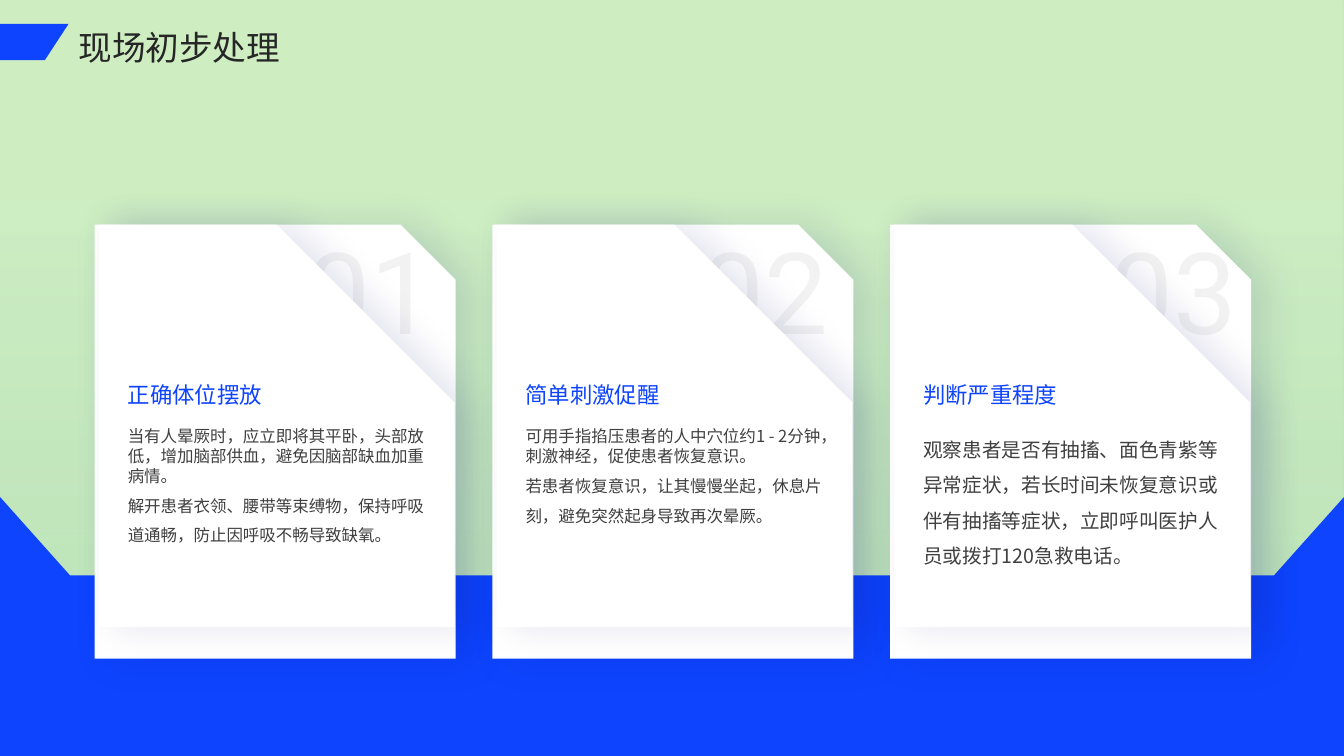
"""Builds a slide with three folded cards on first aid for fainting."""
from lxml import etree
from pptx import Presentation
from pptx import util as u
from pptx.dml.color import RGBColor
from pptx.enum import shapes, text
from pptx.oxml import ns

C = {"bg": "B4E5A2", "blue": "0E44FE", "white": "FFFFFF", "mist": "CFDAFF",
     "shadow": "050B74", "number": "F2F2F2", "body": "404040", "title": "262626"}
CJK = "Noto Sans CJK SC"


class Deck:
    def __init__(self):
        self.prs = Presentation()
        self.prs.slide_width, self.prs.slide_height = u.Pt(960), u.Pt(540)
        self.s = self.prs.slides.add_slide(self.prs.slide_layouts[6])
        self.paint(self.s.background.fill, "bg")

    def paint(self, fill, color):
        fill.solid()
        fill.fore_color.rgb = RGBColor.from_string(C[color])

    def node(self, parent, tag, **attrs):
        e = etree.SubElement(parent, ns.qn("a:" + tag))
        for key, value in attrs.items():
            e.set(key, str(value))
        return e

    def color(self, parent, name, alpha):
        self.node(self.node(parent, "srgbClr", val=C[name]), "alpha", val=alpha * 1000)

    def shape(self, kind, x, y, w, h, color="white"):
        sp = self.s.shapes.add_shape(kind, u.Pt(x), u.Pt(y), u.Pt(w), u.Pt(h))
        sp.shadow.inherit = False
        self.paint(sp.fill, color)
        sp.line.fill.background()
        return sp

    def wash(self):
        sp = self.shape(shapes.MSO_SHAPE.RECTANGLE, 0, 0, 960, 540)
        sp.fill.gradient()
        grad = sp.element.spPr.find(ns.qn("a:gradFill"))
        for child in list(grad):
            grad.remove(child)
        stops = self.node(grad, "gsLst")
        for pos, name, alpha in ((0, "mist", 23), (76, "white", 35)):
            self.color(self.node(stops, "gs", pos=pos * 1000), name, alpha)
        self.node(grad, "lin", ang=270 * 60000, scaled=0)

    def sheet(self, x, y, w, h, snip):
        sp = self.shape(shapes.MSO_SHAPE.SNIP_1_RECTANGLE, x, y, w, h)
        sp.adjustments[0] = snip
        effects = sp.element.spPr.find(ns.qn("a:effectLst"))
        shadow = self.node(effects, "outerShdw", blurRad=u.Pt(27), dist=u.Pt(11),
                           dir=0, algn="l", rotWithShape=0)
        self.color(shadow, "shadow", 11)

    def outline(self, points):
        fb = self.s.shapes.build_freeform(*points[0], scale=u.Pt(1))
        fb.add_line_segments(points[1:], close=True)
        sp = fb.convert_to_shape()
        sp.shadow.inherit = False
        self.paint(sp.fill, "blue")
        sp.line.fill.background()

    def label(self, x, y, w, h, paragraphs, size, color, font=CJK,
              anchor=text.MSO_ANCHOR.TOP, fit=text.MSO_AUTO_SIZE.NONE):
        tf = self.s.shapes.add_textbox(u.Pt(x), u.Pt(y), u.Pt(w), u.Pt(h)).text_frame
        tf.word_wrap, tf.vertical_anchor, tf.auto_size = True, anchor, fit
        for i, (words, spacing) in enumerate(paragraphs):
            p = tf.paragraphs[0] if i == 0 else tf.add_paragraph()
            p.line_spacing = spacing
            r = p.add_run()
            r.text = words
            r.font.size, r.font.name = u.Pt(size), font
            r.font.color.rgb = RGBColor.from_string(C[color])
            self.node(r.font._element, "ea", typeface=font)

    def card(self, x, number, number_x, heading, paragraphs, size):
        bottom = text.MSO_ANCHOR.BOTTOM
        self.sheet(x, 160.4, 257.8, 310, 0.153)
        self.label(number_x, 113.8, 186.5, 144.7, [(number, 1.3)], 81, "number", "Roboto", bottom)
        self.sheet(x + 3, 160.4, 254.2, 287.3, 0.5)
        self.label(x + 16.6, 223.2, 205.9, 72, [(heading, 1.3)], 16, "blue", anchor=bottom)
        self.label(x + 16.6, 301, 226.8, 125.3, paragraphs, size, "body")


def main():
    d = Deck()
    d.wash()
    d.outline([(0, 355), (50.2, 411.1), (909.8, 411.1), (960, 355), (960, 540), (0, 540)])
    cards = [
        ("01", 211.7, "正确体位摆放", [
            ("当有人晕厥时，应立即将其平卧，头部放低，增加脑部供血，避免因脑部缺血加重病情。", 1.0),
            ("解开患者衣领、腰带等束缚物，保持呼吸道通畅，防止因呼吸不畅导致缺氧。", 1.5)], 11.8),
        ("02", 493.2, "简单刺激促醒", [
            ("可用手指掐压患者的人中穴位约1 - 2分钟，刺激神经，促使患者恢复意识。", 1.0),
            ("若患者恢复意识，让其慢慢坐起，休息片刻，避免突然起身导致再次晕厥。", 1.5)], 11.8),
        ("03", 785.5, "判断严重程度", [
            ("观察患者是否有抽搐、面色青紫等异常症状，若长时间未恢复意识或伴有抽搐等症状，"
             "立即呼叫医护人员或拨打120急救电话。", 1.5)], 14),
    ]
    for i, content in enumerate(cards):
        d.card(67.6 + 284.1 * i, *content)
    d.outline([(0, 17.3), (49, 17.3), (32.4, 43.2), (0, 43.2)])
    d.label(49, 13, 843.1, 33.1, [("现场初步处理", 1.1)], 24, "title",
            fit=text.MSO_AUTO_SIZE.SHAPE_TO_FIT_TEXT)
    d.prs.save("out.pptx")


if __name__ == "__main__":
    main()
